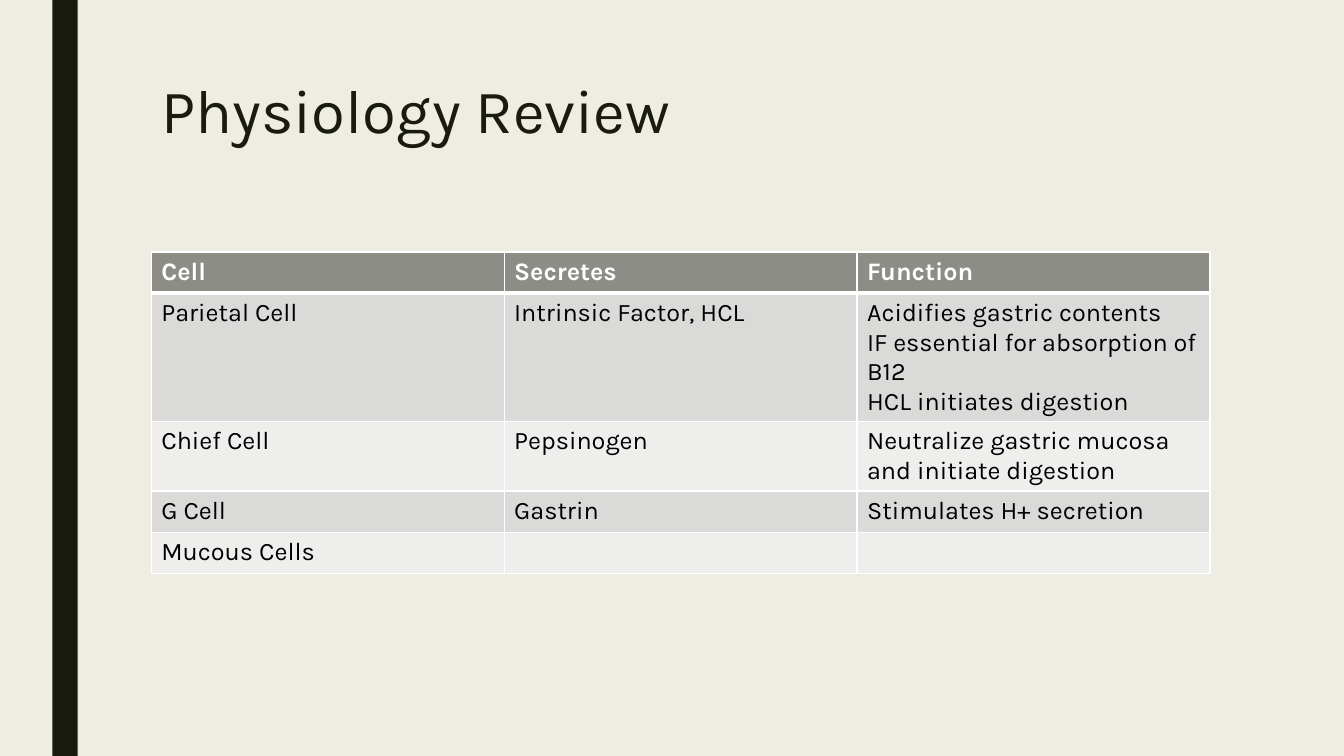
from dataclasses import dataclass

from lxml.etree import SubElement
from pptx import Presentation
from pptx.dml.color import RGBColor as Color
from pptx.enum.shapes import MSO_SHAPE as Shape
from pptx.enum.text import MSO_ANCHOR as Anchor, PP_ALIGN as Align
from pptx.oxml.ns import qn
from pptx.util import Inches, Pt


@dataclass(frozen=True)
class Theme:
    font: str = "Karla"
    paper: str = "EFEDE3"
    ink: str = "191B0E"
    header: str = "8C8D86"
    bands: tuple = ("DADBD9", "EEEEED")
    white: str = "FFFFFF"
    black: str = "000000"
    title_size: int = 44
    table_size: int = 18


theme = Theme()


def write_text(frame, text, *, size, color, bold=False, spacing=None):
    for index, line in enumerate(text.split("\n")):
        para = frame.paragraphs[0] if index == 0 else frame.add_paragraph()
        para.alignment = Align.LEFT
        para.line_spacing = spacing
        if line:
            span = para.add_run()
            span.text = line
            span.font.name = theme.font
            span.font.size = Pt(size)
            span.font.bold = bold
            span.font.color.rgb = Color.from_string(color)


def add_borders(cell, color, **widths):
    properties = cell._tc.get_or_add_tcPr()
    for side, width in widths.items():
        line = SubElement(properties, qn(f"a:ln{side}"), w=str(Pt(width)))
        fill = SubElement(line, qn("a:solidFill"))
        SubElement(fill, qn("a:srgbClr"), val=color)


deck = Presentation()
deck.slide_width = Inches(13.33)
deck.slide_height = Inches(7.5)
page = deck.slides.add_slide(deck.slide_layouts[5])
page.background.fill.solid()
page.background.fill.fore_color.rgb = Color.from_string(theme.paper)

stripe = page.shapes.add_shape(
    Shape.RECTANGLE, Inches(0.52), 0, Inches(0.25), deck.slide_height
)
stripe.shadow.inherit = False
stripe.fill.solid()
stripe.fill.fore_color.rgb = Color.from_string(theme.ink)
stripe.line.fill.background()

title = page.shapes.title
title.left, title.top = Inches(1.5), Inches(0.75)
title.width, title.height = Inches(10.5), Inches(1.62)
title.text_frame.vertical_anchor = Anchor.TOP
write_text(title.text_frame, "Physiology Review", size=theme.title_size,
           color=theme.ink, spacing=0.89)

rows = [
    ("Cell", "Secretes", "Function"),
    ("Parietal Cell", "Intrinsic Factor, HCL",
     "Acidifies gastric contents\nIF essential for absorption of B12\n"
     "HCL initiates digestion"),
    ("Chief Cell", "Pepsinogen",
     "Neutralize gastric mucosa and initiate digestion"),
    ("G Cell", "Gastrin", "Stimulates H+ secretion"),
    ("Mucous Cells", "", ""),
]
row_height = Inches(0.41)
table = page.shapes.add_table(
    len(rows), len(rows[0]), Inches(1.5), Inches(2.5),
    Inches(10.5), row_height * len(rows)
).table

for row_index, row in enumerate(rows):
    is_header = row_index == 0
    fill_color = theme.header if is_header else theme.bands[(row_index - 1) % 2]
    for column_index, text in enumerate(row):
        cell = table.cell(row_index, column_index)
        add_borders(cell, theme.white, L=1, R=1,
                    T=3 if row_index == 1 else 1, B=3 if is_header else 1)
        cell.fill.solid()
        cell.fill.fore_color.rgb = Color.from_string(fill_color)
        write_text(cell.text_frame, text, size=theme.table_size,
                   color=theme.white if is_header else theme.black,
                   bold=is_header)

deck.save("out.pptx")
